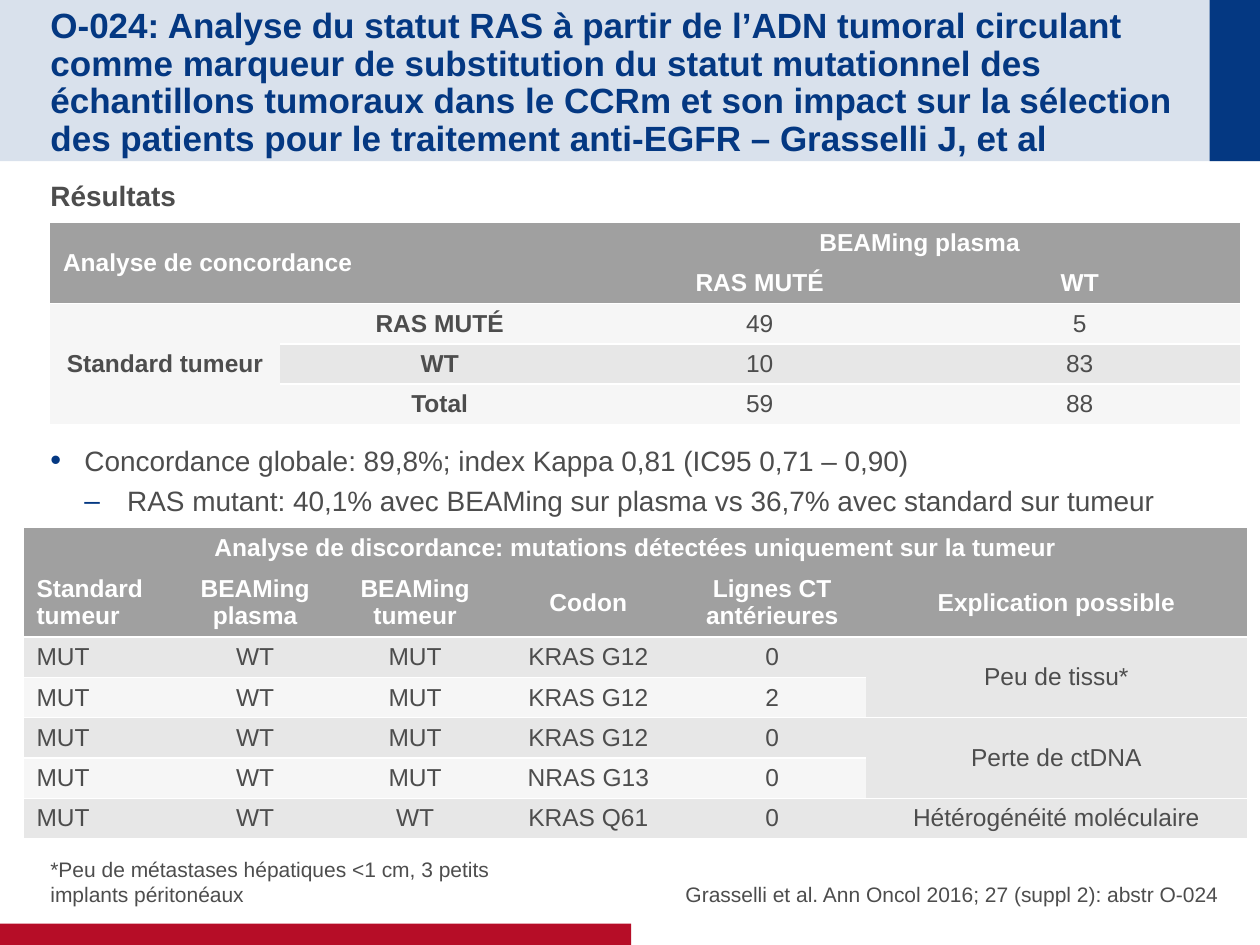
"""Build the slide on RAS status from circulating tumour DNA."""
from pptx import Presentation
from pptx.dml.color import RGBColor
from pptx.enum.shapes import MSO_SHAPE as Shape
from pptx.enum.text import MSO_ANCHOR as Anchor, PP_ALIGN as Align
from pptx.oxml import parse_xml
from pptx.oxml.ns import nsdecls
from pptx.util import Inches, Pt

NAVY = RGBColor(0x04, 0x38, 0x82)
PALE = RGBColor(0xD9, 0xE1, 0xEC)
RED = RGBColor(0xB6, 0x0D, 0x27)
INK = RGBColor(0x4D, 0x4D, 0x4D)
GREY = RGBColor(0xA0, 0xA0, 0xA0)
MID = RGBColor(0xE7, 0xE7, 0xE7)
LIGHT = RGBColor(0xF6, 0xF6, 0xF6)
WHITE = RGBColor(0xFF, 0xFF, 0xFF)
PLAIN = "{2D5ABB26-0587-4C30-8999-92F81FD0307C}"


def write(para, text, size, color=INK, bold=False, align=Align.LEFT):
    para.alignment = align
    run = para.add_run()
    run.text = text
    font = run.font
    font.name, font.size, font.bold = "Arial", Pt(size), bold
    font.color.rgb = color


def add_box(left, top, width, height, anchor, above=0, below=0):
    box = slide.shapes.add_textbox(
        Inches(left), Inches(top), Inches(width), Inches(height))
    frame = box.text_frame
    frame.word_wrap = True
    frame.vertical_anchor = anchor
    frame.margin_left = frame.margin_right = Inches(0)
    frame.margin_top, frame.margin_bottom = Inches(above), Inches(below)
    return frame


prs = Presentation()
prs.slide_width, prs.slide_height = Inches(10), Inches(7.5)
slide = prs.slides.add_slide(prs.slide_layouts[6])

for left, top, width, height, color in [
    (0, 0, 10, 1.28, PALE),
    (9.6, 0, 0.4, 1.28, NAVY),
    (0, 7.33, 5.01, 0.17, RED),
]:
    bar = slide.shapes.add_shape(
        Shape.RECTANGLE, Inches(left), Inches(top), Inches(width), Inches(height))
    bar.shadow.inherit = False
    bar.fill.solid()
    bar.fill.fore_color.rgb = color
    bar.line.fill.background()

title = add_box(0.4, 0.2, 9.25, 0.88, Anchor.MIDDLE, 0.05).paragraphs[0]
title.line_spacing = 0.9
write(title, "O-024: Analyse du statut RAS à partir de l’ADN tumoral circulant "
      "comme marqueur de substitution du statut mutationnel des échantillons "
      "tumoraux dans le CCRm et son impact sur la sélection des patients pour "
      "le traitement anti-EGFR – Grasselli J, et al", 20, NAVY, True)

for left, width, align, text in [
    (0.4, 3.86, Align.LEFT,
     "*Peu de métastases hépatiques <1 cm, 3 petits implants péritonéaux"),
    (5.08, 4.64, Align.RIGHT,
     "Grasselli et al. Ann Oncol 2016; 27 (suppl 2): abstr O-024 "),
]:
    note = add_box(left, 6.67, width, 0.53, Anchor.BOTTOM).paragraphs[0]
    note.space_after = Pt(4)
    write(note, text, 12, align=align)

body = add_box(0.4, 1.37, 9.45, 5.19, Anchor.TOP, 0.05, 0.05)
head = body.paragraphs[0]
head.space_after = Pt(4)
write(head, "Résultats", 16, bold=True)
for level, mark, scale, left, hang, gap, text in [
    (0, "•", 110, 0.27, 0.27, 128,
     "Concordance globale: 89,8%; index Kappa 0,81 (IC95 0,71 – 0,90)"),
    (1, "–", 100, 0.61, 0.34, 0,
     "RAS mutant: 40,1% avec BEAMing sur plasma vs 36,7% avec standard sur tumeur"),
]:
    para = body.add_paragraph()
    para.level = level
    para.space_before, para.space_after = Pt(gap), Pt(4)
    write(para, text, 16)
    props = para._p.get_or_add_pPr()
    props.set("marL", str(Inches(left)))
    props.set("indent", str(-Inches(hang)))
    for xml in [
        f'<a:buClr {nsdecls("a")}><a:srgbClr val="{NAVY}"/></a:buClr>',
        f'<a:buSzPct {nsdecls("a")} val="{scale * 1000}"/>',
        f'<a:buFont {nsdecls("a")} typeface="Arial"/>',
        f'<a:buChar {nsdecls("a")} char="{mark}"/>',
    ]:
        props.append(parse_xml(xml))

match = [
    ["Analyse de concordance", "", "BEAMing plasma", ""],
    ["", "", "RAS MUTÉ", "WT"],
    ["Standard tumeur", "RAS MUTÉ", "49", "5"],
    ["", "WT", "10", "83"],
    ["", "Total", "59", "88"],
]
differ = [
    ["Analyse de discordance: mutations détectées uniquement sur la tumeur"] + [""] * 5,
    ["Standard tumeur", "BEAMing plasma", "BEAMing tumeur", "Codon",
     "Lignes CT antérieures", "Explication possible"],
    ["MUT", "WT", "MUT", "KRAS G12", "0", "Peu de tissu*"],
    ["MUT", "WT", "MUT", "KRAS G12", "2", ""],
    ["MUT", "WT", "MUT", "KRAS G12", "0", "Perte de ctDNA"],
    ["MUT", "WT", "MUT", "NRAS G13", "0", ""],
    ["MUT", "WT", "WT", "KRAS Q61", "0", "Hétérogénéité moléculaire"],
]

for data, left, top, cols, rows, spans, lefts, bolds, tints in [
    (match, 0.4, 1.77, [1.82] + [2.54] * 3, [0.32] * 5,
     [(0, 0, 1, 1), (0, 2, 0, 3), (2, 0, 4, 0)], [(0, 0)], 2, (LIGHT, MID)),
    (differ, 0.19, 4.19, [1.22, 1.23, 1.31, 1.44, 1.48, 3.03],
     [0.32, 0.54] + [0.32] * 5,
     [(0, 0, 0, 5), (2, 5, 3, 5), (4, 5, 5, 5)],
     [(row, 0) for row in range(1, 7)], 0, (MID, LIGHT)),
]:
    frame = slide.shapes.add_table(
        len(rows), len(cols), Inches(left), Inches(top),
        Inches(sum(cols)), Inches(sum(rows)))
    table = frame.table
    table.first_row = table.horz_banding = False
    table._tbl.tblPr.find("{*}tableStyleId").text = PLAIN
    for col, width in zip(table.columns, cols):
        col.width = Inches(width)
    for row, height in zip(table.rows, rows):
        row.height = Inches(height)
    for r1, c1, r2, c2 in spans:
        table.cell(r1, c1).merge(table.cell(r2, c2))
    for r, line in enumerate(data):
        for c, text in enumerate(line):
            cell = table.cell(r, c)
            top_row = r < 2
            cell.vertical_anchor = Anchor.MIDDLE
            cell.margin_top = cell.margin_bottom = Inches(0.04)
            cell.fill.solid()
            cell.fill.fore_color.rgb = GREY if top_row else tints[r % 2]
            if text:
                write(cell.text_frame.paragraphs[0], text, 14,
                      WHITE if top_row else INK, top_row or c < bolds,
                      Align.LEFT if (r, c) in lefts else Align.CENTER)
            if not top_row:
                for spot, side in enumerate(["lnT", "lnB"]):
                    cell._tc.get_or_add_tcPr().insert(spot, parse_xml(
                        f'<a:{side} {nsdecls("a")} w="{Pt(1)}"><a:solidFill>'
                        f'<a:srgbClr val="{WHITE}"/></a:solidFill></a:{side}>'))

prs.save("out.pptx")
